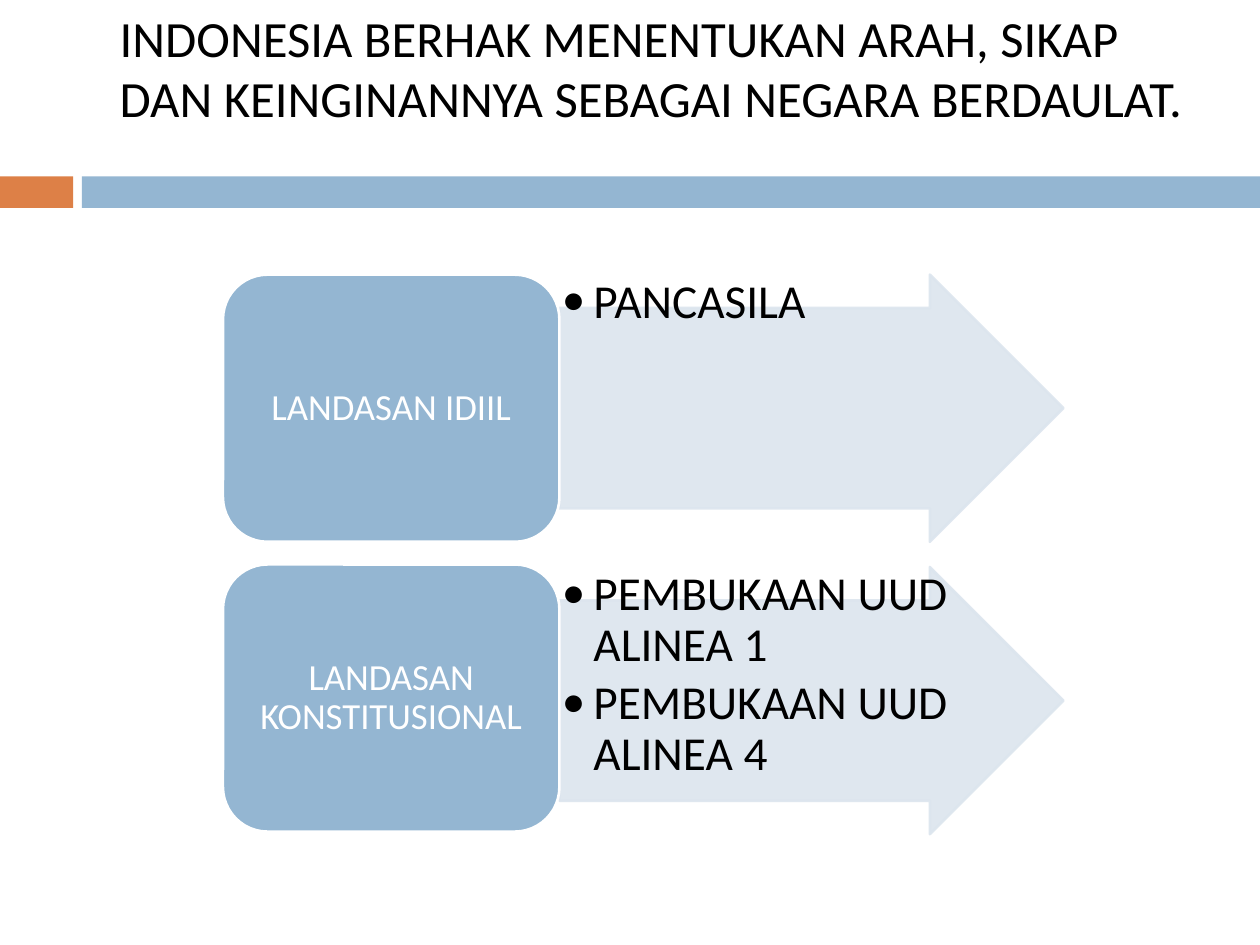
from lxml import etree
from pptx import Presentation
from pptx.dml.color import RGBColor
from pptx.enum.shapes import MSO_SHAPE as Shape
from pptx.enum.text import MSO_ANCHOR as Anchor, MSO_AUTO_SIZE as Fit, PP_ALIGN as Align
from pptx.oxml.ns import qn
from pptx.util import Inches, Pt

BLUE, PALE, RUST = "94B6D2", "DCE5EE", "DD8047"
WHITE, BLACK = "FFFFFF", "000000"
HEAD = "INDONESIA BERHAK MENENTUKAN ARAH, SIKAP DAN KEINGINANNYA SEBAGAI NEGARA BERDAULAT."
# Label, label top, arrow top, points
ROWS = [
    ("LANDASAN IDIIL", 2.18, 2.18, ["PANCASILA"]),
    ("LANDASAN KONSTITUSIONAL", 4.48, 4.5,
     ["PEMBUKAAN UUD ALINEA 1", "PEMBUKAAN UUD ALINEA 4"]),
]
LEFT, MID, WIDE, LONG, HIGH = 1.77, 4.44, 2.67, 4, 2.12


def paint(fill, color, alpha=None):
    fill.solid()
    fill.fore_color.rgb = RGBColor.from_string(color)
    if alpha:
        node = next(fill._xPr.iter(qn("a:srgbClr")))
        etree.SubElement(node, qn("a:alpha")).set("val", str(alpha * 1000))


def add_block(slide, kind, box, color, edge=None, alpha=None):
    shape = slide.shapes.add_shape(kind, *map(Inches, box))
    shape.shadow.inherit = False
    paint(shape.fill, color, alpha)
    if edge:
        paint(shape.line.fill, edge, alpha)
        shape.line.width = Pt(1.5)
    else:
        shape.line.fill.background()
    return shape


def set_frame(frame, side, top, anchor):
    frame.word_wrap = True
    frame.auto_size = Fit.NONE
    frame.vertical_anchor = anchor
    frame.margin_left = frame.margin_right = Inches(side)
    frame.margin_top = frame.margin_bottom = Inches(top)


def style(para, size, color, align=Align.LEFT, space=1.0, after=0):
    para.alignment = align
    para.line_spacing = space
    para.space_after = Pt(after)
    for run in para.runs:
        run.font.name = "Calibri"
        run.font.size = Pt(size)
        run.font.color.rgb = RGBColor.from_string(color)


def indent(para, depth, mark=None):
    props = para._p.get_or_add_pPr()
    props.set("marL", str(Inches(depth)))
    props.set("indent", str(-Inches(depth) if mark else 0))
    if mark:
        etree.SubElement(props, qn("a:buFont")).set("typeface", "Calibri")
        etree.SubElement(props, qn("a:buChar")).set("char", mark)


def add_head(slide):
    title = slide.shapes.title
    title.left, title.top, title.width, title.height = map(Inches, (0.5, 0, 9, 1.3))
    frame = title.text_frame
    frame.text = HEAD
    set_frame(frame, 0.1, 0.05, Anchor.TOP)
    style(frame.paragraphs[0], 29, BLACK)
    indent(frame.paragraphs[0], 0.35)


def add_arrow(slide, top, points):
    box = (MID, top, LONG, HIGH)
    arrow = add_block(slide, Shape.RIGHT_ARROW, box, PALE, PALE, 90)
    arrow.adjustments[0] = 0.75
    arrow.adjustments[1] = 0.5
    # The list uses the full arrow height, so it has its own box
    frame = slide.shapes.add_textbox(*map(Inches, box)).text_frame
    set_frame(frame, 0.02, 0.02, Anchor.TOP)
    frame.text = "\n".join(points)
    for para in frame.paragraphs:
        style(para, 27, BLACK, space=0.9, after=4)
        indent(para, 0.25, "•")


def add_label(slide, top, text):
    label = add_block(slide, Shape.ROUNDED_RECTANGLE, (LEFT, top, WIDE, HIGH), BLUE, WHITE)
    frame = label.text_frame
    set_frame(frame, 0, 0.04, Anchor.MIDDLE)
    frame.text = text
    style(frame.paragraphs[0], 21, WHITE, Align.CENTER, 0.9)


def main():
    deck = Presentation()
    deck.slide_width, deck.slide_height = Inches(10), Inches(7.5)
    slide = deck.slides.add_slide(deck.slide_layouts[5])
    # Divider band
    add_block(slide, Shape.RECTANGLE, (0, 1.4, 0.58, 0.25), RUST)
    add_block(slide, Shape.RECTANGLE, (0.65, 1.4, 9.35, 0.25), BLUE)
    add_head(slide)
    # Labels with their arrows
    for text, top, tip, points in ROWS:
        add_arrow(slide, tip, points)
        add_label(slide, top, text)
    deck.save("out.pptx")


if __name__ == "__main__":
    main()
